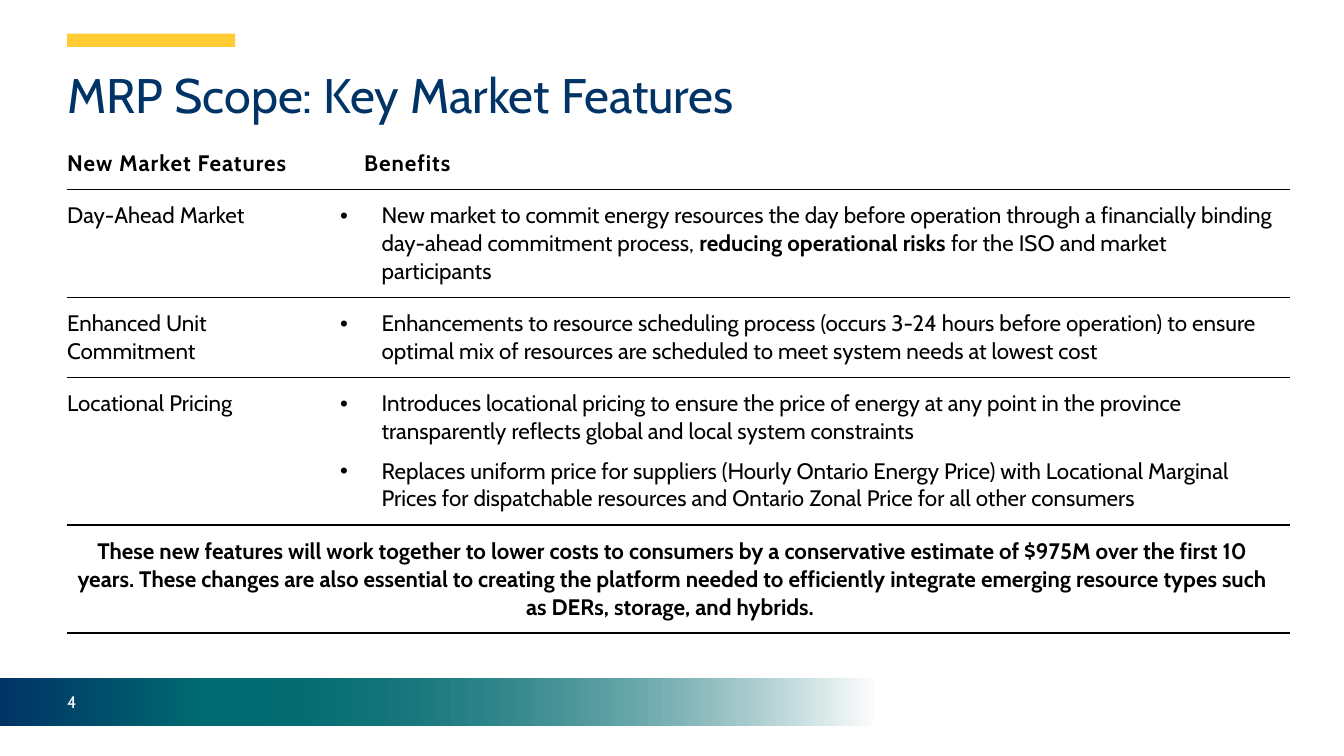
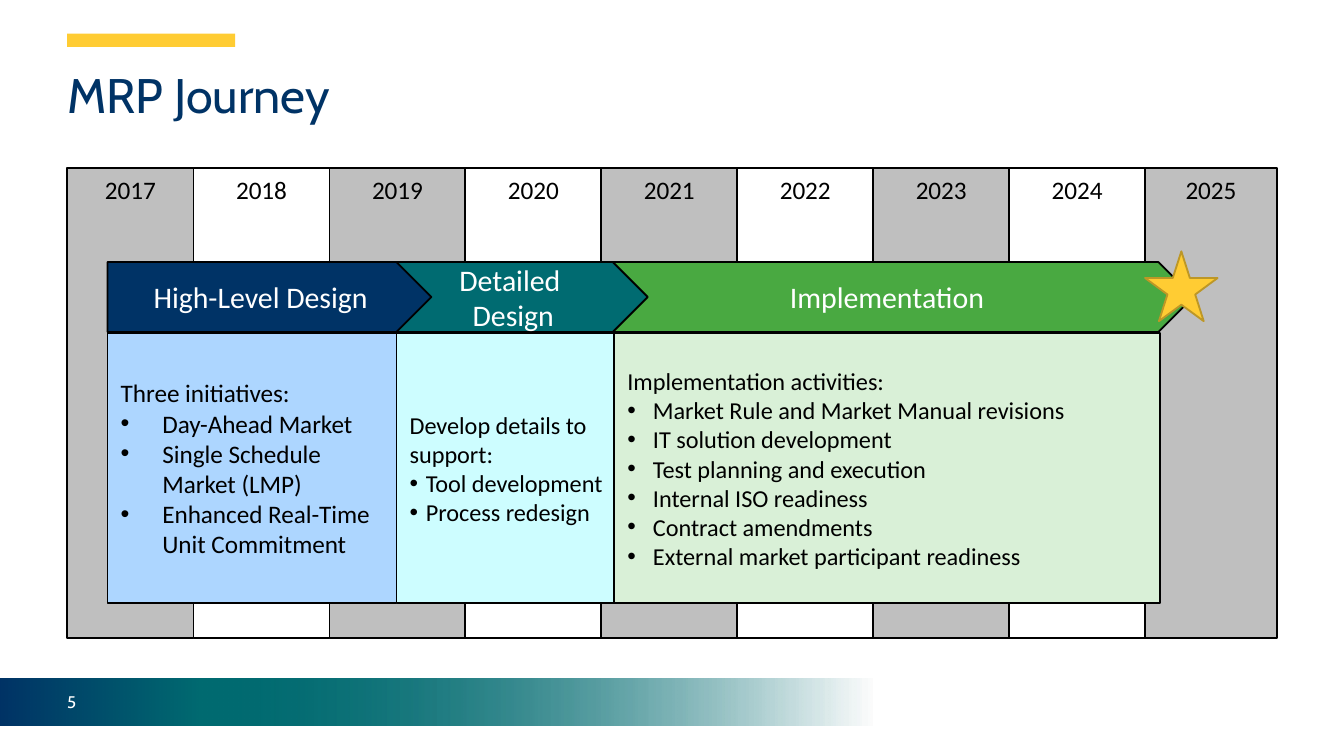
from dataclasses import dataclass

from lxml import etree
from pptx import Presentation
from pptx.dml.color import RGBColor
from pptx.enum.shapes import MSO_SHAPE
from pptx.enum.text import MSO_ANCHOR, PP_ALIGN
from pptx.oxml.ns import qn
from pptx.util import Inches, Pt

RECT, PENTAGON, STAR = MSO_SHAPE.RECTANGLE, MSO_SHAPE.PENTAGON, MSO_SHAPE.STAR_5_POINT
LEFT, CENTER = PP_ALIGN.LEFT, PP_ALIGN.CENTER
TOP, MIDDLE = MSO_ANCHOR.TOP, MSO_ANCHOR.MIDDLE

NAVY, TEAL, GREEN, YELLOW = "003366", "006B71", "49A941", "FFCC33"
BLACK, WHITE, GREY, GOLD = "000000", "FFFFFF", "BFBFBF", "BD9726"
BRAND_FONT, DIAGRAM_FONT = "Cabin", "Calibri"
TITLE_ONLY = 5
SLIDE_WIDTH = 10
MARGIN = 0.5
BAND_TOP, BAND_HEIGHT = 5.05, 0.35
SHAPE_INSETS = (0.1, 0.05, 0.1, 0.05)
NO_INSETS = (0, 0, 0, 0)


@dataclass
class Feature:
    name: str
    benefits: str
    height: float
    rule_below: float


@dataclass
class Phase:
    name: str
    arrow_left: float
    arrow_width: float
    color: str
    box_left: float
    box_width: float
    tint: str
    size: float
    indent: float
    work: str


FEATURES = [
    Feature(
        "Day-Ahead Market",
        "• New market to commit energy resources the day before operation through a "
        "financially binding day-ahead commitment process, **reducing operational "
        "risks **for the ISO and market participants",
        0.7, 0.5),
    Feature(
        "Enhanced Unit Commitment",
        "• Enhancements to resource scheduling process (occurs 3-24 hours before "
        "operation) to ensure optimal mix of resources are scheduled to meet system "
        "needs at lowest cost",
        0.56, 1),
    Feature(
        "Locational Pricing",
        "• Introduces locational pricing to ensure the price of energy at any point in "
        "the province transparently reflects global and local system constraints \n"
        "• Replaces uniform price for suppliers (Hourly Ontario Energy Price) with "
        "Locational Marginal Prices for dispatchable resources and Ontario Zonal Price "
        "for all other consumers",
        1.05, 1),
]
CONCLUSION = (
    "These new features will work together to lower costs to consumers by a "
    "conservative estimate of $975M over the first 10 years. These changes are also "
    "essential to creating the platform needed to efficiently integrate emerging "
    "resource types such as DERs, storage, and hybrids. ")

PHASES = [
    Phase("High-Level Design", 0.8, 2.41, NAVY, 0.8, 2.15, "ADD6FF", 13.5, 0.31,
          "Three initiatives:\n• Day-Ahead Market\n• Single Schedule Market (LMP)\n"
          "• Enhanced Real-Time Unit Commitment"),
    Phase("Detailed \nDesign", 2.95, 1.87, TEAL, 2.95, 1.67, "CDFDFF", 13, 0.12,
          "Develop details to support:\n• Tool development\n• Process redesign"),
    Phase("Implementation", 4.45, 4.43, GREEN, 4.57, 4.06, "D9F0D7", 13, 0.19,
          "Implementation activities:\n• Market Rule and Market Manual revisions\n"
          "• IT solution development\n• Test planning and execution\n"
          "• Internal ISO readiness\n• Contract amendments\n"
          "• External market participant readiness"),
]


def rgb(color: str) -> RGBColor:
    return RGBColor.from_string(color)


def write_text(holder, text: str, *, size: float, font: str = DIAGRAM_FONT,
               color: str = BLACK, bold: bool = False, align=LEFT, anchor=TOP,
               insets: tuple = SHAPE_INSETS, indent: float = 0, leading: float = 0,
               after: float = 0, tracking: float = 0) -> None:
    """Fill a text frame or a table cell.

    Each line is a paragraph, "• " starts a bullet, ** toggles bold.
    """
    holder.vertical_anchor = anchor
    (holder.margin_left, holder.margin_top,
     holder.margin_right, holder.margin_bottom) = map(Inches, insets)
    frame = getattr(holder, "text_frame", holder)
    if frame is holder:
        frame.word_wrap = True
    for number, line in enumerate(text.split("\n")):
        paragraph = frame.paragraphs[0] if number == 0 else frame.add_paragraph()
        if line.startswith("• "):
            line = line[2:]
            properties = paragraph._p.get_or_add_pPr()
            properties.set("marL", str(Inches(indent)))
            properties.set("indent", str(-Inches(indent)))
            etree.SubElement(properties, qn("a:buFont")).set("typeface", "Arial")
            etree.SubElement(properties, qn("a:buChar")).set("char", "•")
        paragraph.alignment = align
        if leading:
            paragraph.line_spacing = Pt(leading)
        if after:
            paragraph.space_after = Pt(after)
        for part, words in enumerate(line.split("**")):
            run = paragraph.add_run()
            run.text = words
            run.font.size = Pt(size)
            run.font.name = font
            run.font.bold = bold != (part % 2 == 1)
            run.font.color.rgb = rgb(color)
            if tracking:
                run._r.get_or_add_rPr().set("spc", str(int(tracking * 100)))


def add_block(slide, kind, left: float, top: float, width: float, height: float,
              fill: str, line: str = ""):
    block = slide.shapes.add_shape(
        kind, Inches(left), Inches(top), Inches(width), Inches(height))
    block.shadow.inherit = False
    block.fill.solid()
    block.fill.fore_color.rgb = rgb(fill)
    if line:
        block.line.color.rgb = rgb(line)
        block.line.width = Pt(1)
    else:
        block.line.fill.background()
    return block


def add_fading_band(slide) -> None:
    band = add_block(slide, RECT, 0, BAND_TOP, SLIDE_WIDTH, BAND_HEIGHT, TEAL)
    band.fill.gradient()
    band.fill.gradient_angle = 180
    stops = band._element.spPr.find(".//" + qn("a:gsLst"))
    for stop in list(stops):
        stops.remove(stop)
    for position, color, alpha in ((35, TEAL, 0), (85, TEAL, 100), (100, NAVY, 100)):
        stop = etree.SubElement(stops, qn("a:gs"), pos=str(position * 1000))
        tone = etree.SubElement(stop, qn("a:srgbClr"), val=color)
        etree.SubElement(tone, qn("a:alpha"), val=str(alpha * 1000))


def start_slide(deck, title: str, number: int):
    slide = deck.slides.add_slide(deck.slide_layouts[TITLE_ONLY])
    # Two layers deepen the fade of the footer band
    for _ in range(2):
        add_fading_band(slide)
    add_block(slide, RECT, MARGIN, 0.25, 1.25, 0.1, YELLOW)

    heading = slide.shapes.title
    heading.left, heading.top = Inches(MARGIN), Inches(0.5)
    heading.width, heading.height = Inches(9), Inches(0.5)
    write_text(heading.text_frame, title, size=26, font=BRAND_FONT, color=NAVY,
               insets=NO_INSETS, leading=30)

    page = slide.shapes.add_textbox(
        Inches(MARGIN), Inches(BAND_TOP), Inches(0.61), Inches(BAND_HEIGHT))
    write_text(page.text_frame, str(number), size=9, font=BRAND_FONT, color=WHITE,
               anchor=MIDDLE, insets=NO_INSETS)
    return slide


def rule_cell(cell, above: float, below: float) -> None:
    """Clear the cell's fill and draw only its horizontal borders."""
    cell.fill.background()
    properties = cell._tc.get_or_add_tcPr()
    borders = (("L", 0), ("R", 0), ("T", above), ("B", below))
    for place, (side, width) in enumerate(borders):
        border = etree.Element(qn(f"a:ln{side}"), w=str(Pt(width)))
        if width:
            fill = etree.SubElement(border, qn("a:solidFill"))
            etree.SubElement(fill, qn("a:srgbClr"), val=BLACK)
        else:
            etree.SubElement(border, qn("a:noFill"))
        properties.insert(place, border)


def write_cell(cell, text: str, **style) -> None:
    settings = dict(size=12, font=BRAND_FONT, leading=15, insets=(0, 0.09, 0.09, 0.09))
    write_text(cell, text, **(settings | style))


def build_features(deck) -> None:
    slide = start_slide(deck, "MRP Scope: Key Market Features", 4)
    heights = [0.25, *(feature.height for feature in FEATURES), 0.73]
    rules = [0, 0.5, *(feature.rule_below for feature in FEATURES), 1]
    table = slide.shapes.add_table(
        len(heights), 2, Inches(MARGIN), Inches(1.15), Inches(9.1),
        Inches(sum(heights))).table
    table.first_row = table.horz_banding = False
    for column, width in zip(table.columns, (2.03, 7.07)):
        column.width = Inches(width)
    for index, height in enumerate(heights):
        table.rows[index].height = Inches(height)
        for cell in table.rows[index].cells:
            rule_cell(cell, rules[index], rules[index + 1])

    # Header row, with "Benefits" set in from the bullets below
    for column, (label, inset) in enumerate((("New Market Features", 0),
                                             ("Benefits", 0.18))):
        write_cell(table.cell(0, column), label, bold=True, tracking=0.5, leading=12,
                   insets=(inset, 0, 0.09, 0.09))

    # One row per feature
    for row, feature in enumerate(FEATURES, start=1):
        write_cell(table.cell(row, 0), feature.name)
        write_cell(table.cell(row, 1), feature.benefits, indent=0.31, after=6)

    # Conclusion across both columns
    last = len(heights) - 1
    table.cell(last, 0).merge(table.cell(last, 1))
    write_cell(table.cell(last, 0), CONCLUSION, bold=True, align=CENTER)


def build_journey(deck) -> None:
    slide = start_slide(deck, "MRP Journey", 5)

    # Year columns: the first and last differ in width, the rest are equal
    first_inner, last_inner = 1.44, 8.52
    pitch = (last_inner - first_inner) / 7
    edges = [MARGIN, *(first_inner + i * pitch for i in range(8)), 9.5]
    for index, (left, right) in enumerate(zip(edges, edges[1:])):
        year = add_block(slide, RECT, left, 1.25, right - left, 3.5,
                         WHITE if index % 2 else GREY, BLACK)
        write_text(year.text_frame, str(2017 + index), size=13.5, align=CENTER)

    # Phase arrows, each lying over the one that follows
    for phase in reversed(PHASES):
        arrow = add_block(slide, PENTAGON, phase.arrow_left, 1.95, phase.arrow_width,
                          0.52, phase.color, BLACK)
        write_text(arrow.text_frame, phase.name, size=16, color=WHITE,
                   align=CENTER, anchor=MIDDLE)
    add_block(slide, STAR, last_inner, 1.87, 0.54, 0.52, YELLOW, GOLD)

    # Work done in each phase
    for phase in PHASES:
        box = add_block(slide, RECT, phase.box_left, 2.48, phase.box_width, 2.01,
                        phase.tint, BLACK)
        write_text(box.text_frame, phase.work, size=phase.size, anchor=MIDDLE,
                   indent=phase.indent)


def main() -> None:
    deck = Presentation()
    deck.slide_width = Inches(SLIDE_WIDTH)
    deck.slide_height = Inches(SLIDE_WIDTH * 9 / 16)
    build_features(deck)
    build_journey(deck)
    deck.save("out.pptx")


if __name__ == "__main__":
    main()
